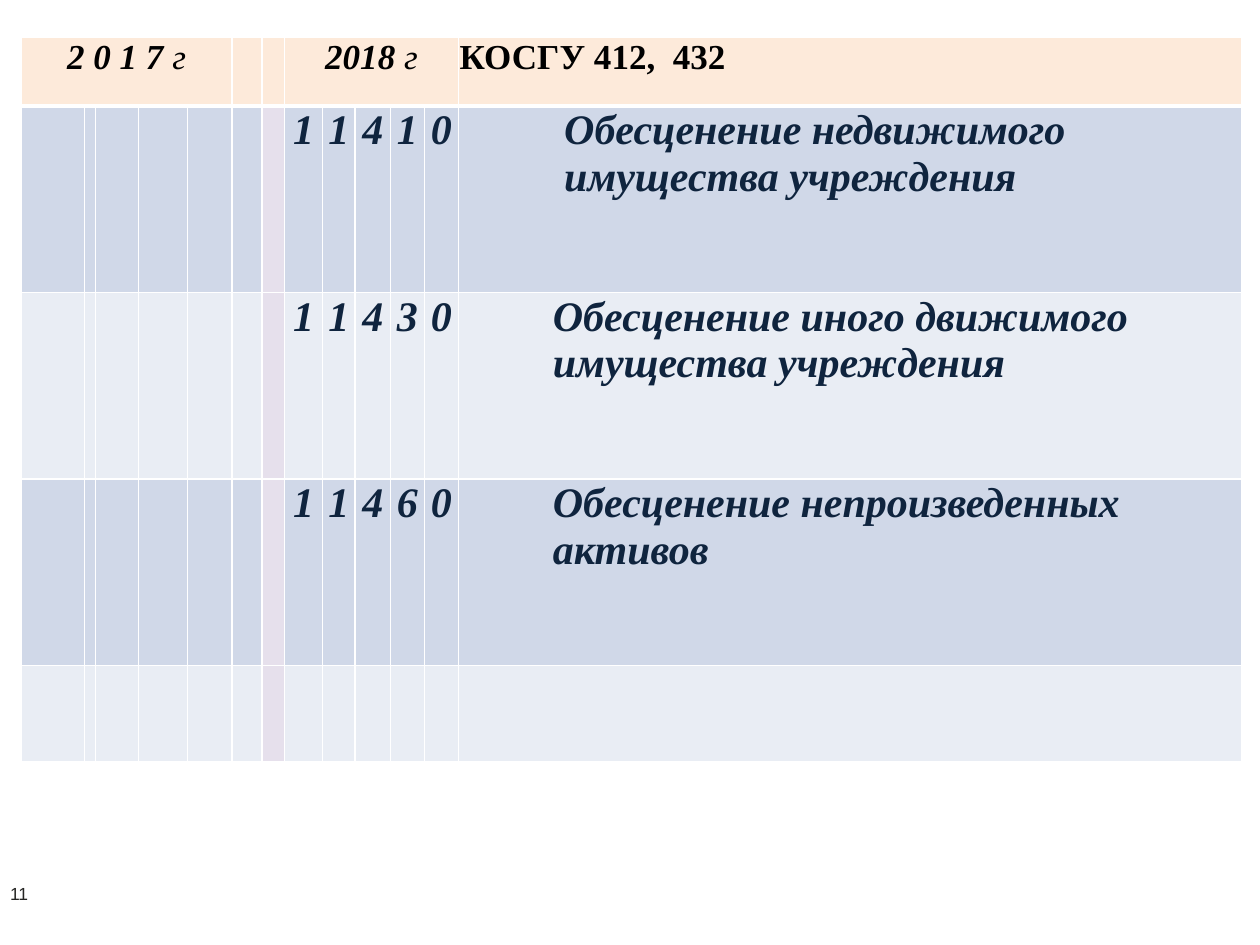
import pptx
import pptx.util
import pptx.dml.color
import pptx.enum.text
import pptx.oxml.ns
import lxml.etree

COLORS = {
    "header": "FDEADA", "odd": "D0D8E8", "even": "E9EDF4", "divider": "E6E0EC",
    "border": "FFFFFF", "black": "000000", "navy": "0F243E", "number": "252523",
}
COLUMNS = [50, 9, 34, 39, 35, 24, 18, 30, 26, 28, 27, 27, 622]
ROWS = [55, 148, 148, 148, 76]
DIVIDER, CODE, NAME = 6, 7, 12
ACCOUNTS = [
    ("11410", ["Обесценение недвижимого", "имущества учреждения"], 0.84),
    ("11430", ["Обесценение иного движимого имущества учреждения"], 0.75),
    ("11460", ["Обесценение непроизведенных активов"], 0.75),
]
CENTER = pptx.enum.text.PP_ALIGN.CENTER
LEFT = pptx.enum.text.PP_ALIGN.LEFT


def rgb(name):
    return pptx.dml.color.RGBColor.from_string(COLORS[name])


def share_box(prs, x, y, w, h):
    return (int(prs.slide_width * x), int(prs.slide_height * y),
            int(prs.slide_width * w), int(prs.slide_height * h))


def set_borders(cell, widths):
    qn = pptx.oxml.ns.qn
    tcPr = cell._tc.get_or_add_tcPr()
    for i, (side, width) in enumerate(widths.items()):
        ln = lxml.etree.Element(qn(f"a:ln{side}"), w=str(pptx.util.Pt(width)))
        fill = lxml.etree.SubElement(ln, qn("a:solidFill"))
        lxml.etree.SubElement(fill, qn("a:srgbClr"), val=COLORS["border"])
        tcPr.insert(i, ln)


def style_cell(cell, fill, top, bottom):
    cell.margin_left = cell.margin_right = cell.margin_top = pptx.util.Inches(0.01)
    cell.margin_bottom = 0
    cell.fill.solid()
    cell.fill.fore_color.rgb = rgb(fill)
    set_borders(cell, {"L": 1, "R": 1, "T": top, "B": bottom})


def write(tf, paragraphs, size, color, align=LEFT, bold=True, italic=True,
          name="Times New Roman"):
    for i, text in enumerate(paragraphs):
        p = tf.paragraphs[0] if i == 0 else tf.add_paragraph()
        p.alignment = align
        p.font.size = pptx.util.Pt(size)
        p.font.name = name
        p.font.bold = bold
        p.font.italic = italic
        p.font.color.rgb = rgb(color)
        p.add_run().text = text


def fill_header(table):
    for first, year in ((0, "2 0 1 7 "), (CODE, "2018 ")):
        cell = table.cell(0, first)
        cell.merge(table.cell(0, first + 4))
        write(cell.text_frame, [year], 20, "black", CENTER)
        r = cell.text_frame.paragraphs[0].add_run()
        r.text = "г"
        r.font.bold = False
    write(table.cell(0, NAME).text_frame, ["КОСГУ 412,  432"], 20, "black", italic=False)


def fill_accounts(table):
    for row, (code, lines, indent) in enumerate(ACCOUNTS, 1):
        for col, digit in enumerate(code, CODE):
            write(table.cell(row, col).text_frame, [digit], 24, "navy", CENTER)
        cell = table.cell(row, NAME)
        cell.margin_left = pptx.util.Inches(indent)
        write(cell.text_frame, lines, 24, "navy")


def add_account_table(s, box):
    x, y, w, h = box
    table = s.shapes.add_table(len(ROWS), len(COLUMNS), x, y, w, h).table
    for column, weight in zip(table.columns, COLUMNS):
        column.width = w * weight // sum(COLUMNS)
    for row, weight in zip(table.rows, ROWS):
        row.height = h * weight // sum(ROWS)
    for i in range(len(ROWS)):
        for j in range(len(COLUMNS)):
            band = "odd" if i % 2 else "even"
            fill = "header" if i == 0 else "divider" if j == DIVIDER else band
            style_cell(table.cell(i, j), fill, 3 if i == 1 else 1, 3 if i == 0 else 1)
    fill_header(table)
    fill_accounts(table)


def add_page_number(s, box):
    tf = s.shapes.add_textbox(*box).text_frame
    tf.word_wrap = True
    tf.margin_left = tf.margin_right = tf.margin_top = tf.margin_bottom = 0
    write(tf, ["11"], 10, "number", bold=False, italic=False, name="Arial")
    tf.paragraphs[0].line_spacing = pptx.util.Pt(11.5)


def main():
    prs = pptx.Presentation()
    prs.slide_width = pptx.util.Inches(10)
    prs.slide_height = pptx.util.Inches(7.5)
    s = prs.slides.add_slide(prs.slide_layouts[6])
    add_page_number(s, share_box(prs, 0.008, 0.935, 0.516, 0.037))
    add_account_table(s, share_box(prs, 0.017, 0.039, 0.969, 0.767))
    prs.save("out.pptx")


if __name__ == "__main__":
    main()
